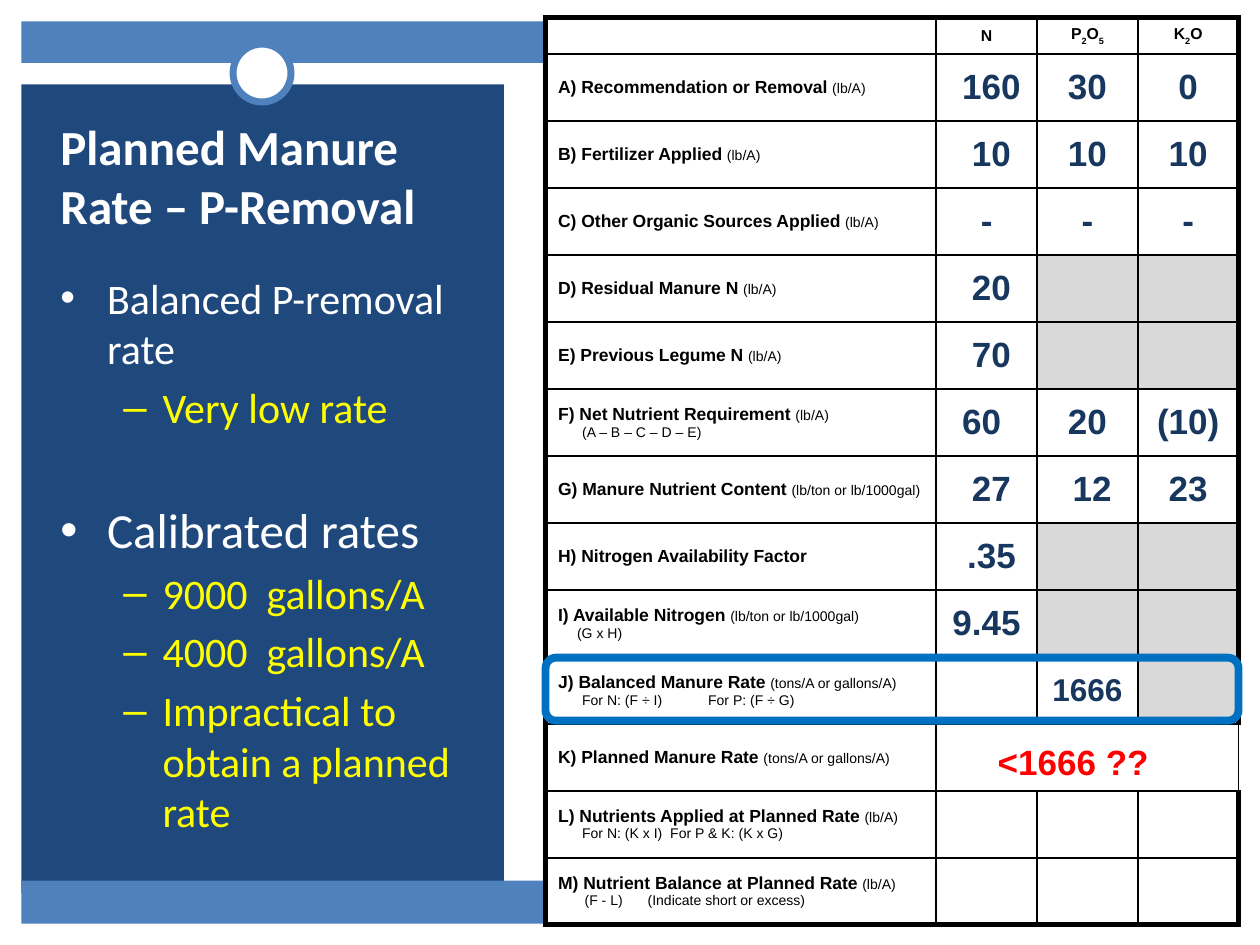
from lxml.etree import SubElement
from pptx import Presentation
from pptx.dml.color import RGBColor
from pptx.enum.shapes import MSO_SHAPE
from pptx.enum.text import MSO_ANCHOR, MSO_AUTO_SIZE, PP_ALIGN
from pptx.oxml.ns import qn
from pptx.util import Inches, Pt

BLACK = RGBColor(0x00, 0x00, 0x00)
WHITE = RGBColor(0xFF, 0xFF, 0xFF)
GREY = RGBColor(0xD9, 0xD9, 0xD9)
BLUE = RGBColor(0x4F, 0x81, 0xBD)
NAVY = RGBColor(0x1F, 0x49, 0x7D)
INK = RGBColor(0x17, 0x37, 0x5E)
YELLOW = RGBColor(0xFF, 0xFF, 0x00)
RED = RGBColor(0xFF, 0x00, 0x00)
HIGHLIGHT = RGBColor(0x00, 0x70, 0xC0)

TITLE = "Planned Manure Rate – P-Removal"
BULLETS = [
    (0, "Balanced P-removal rate", 24, 4.8),
    (1, "Very low rate", 24, 4.8),
    (0, "Calibrated rates", 28, 39),
    (1, "9000  gallons/A", 24, 4.8),
    (1, "4000  gallons/A", 24, 4.8),
    (1, "Impractical to obtain a planned rate", 24, 4.8),
]
LEVELS = [(WHITE, 0.37, -0.37), (YELLOW, 0.81, -0.31)]

HEADERS = ["", "N", "P2O5", "K2O"]
X = None
ROWS = [
    ("A) Recommendation or Removal ", "(lb/A)", "", [" 160", "30", "0"]),
    ("B) Fertilizer Applied ", "(lb/A)", "", [" 10", "10", "10"]),
    ("C) Other Organic Sources Applied ", "(lb/A)", "", ["-", "-", "-"]),
    ("D) Residual Manure N ", "(lb/A)", "", [" 20", X, X]),
    ("E) Previous Legume N ", "(lb/A)", "", [" 70", X, X]),
    ("F) Net Nutrient Requirement ", "(lb/A)", "(A – B – C – D – E)", ["60 ", "20", "(10)"]),
    ("G) Manure Nutrient Content ", "(lb/ton or lb/1000gal)", "", [" 27", " 12", "23"]),
    ("H) Nitrogen Availability Factor", "", "", [" .35", X, X]),
    ("I) Available Nitrogen ", "(lb/ton or lb/1000gal)", "(G x H)", ["9.45 ", X, X]),
    ("J) Balanced Manure Rate ", "(tons/A or gallons/A)",
     "For N: (F ÷ I)\tFor P: (F ÷ G)", ["", "1666 ", X]),
    ("K) Planned Manure Rate ", "(tons/A or gallons/A)", "", ["", "", ""]),
    ("L) Nutrients Applied at Planned Rate ", "(lb/A)",
     "For N: (K x I)  For P & K: (K x G)", ["", "", ""]),
    ("M) Nutrient Balance at Planned Rate ", "(lb/A)",
     "(F - L)\t(Indicate short or excess)", ["", "", ""]),
]
NOTE_INDENT = {"I": 0.15, "M": 0.21}
NOTE_TAB = {"J": 0.94, "M": 0.64}
MERGED_ROW = 11
COLUMNS = [3.1, 0.8, 0.8, 0.8]
HEADER_H, TABLE_H = 0.29, 7.2


def add_block(s, kind, box, fill=None, line=None, width=0):
    sp = s.shapes.add_shape(kind, *map(Inches, box))
    sp.shadow.inherit = False
    if fill is None:
        sp.fill.background()
    else:
        sp.fill.solid()
        sp.fill.fore_color.rgb = fill
    if line is None:
        sp.line.fill.background()
    else:
        sp.line.color.rgb = line
        sp.line.width = Pt(width)
    return sp


def add_run(p, text, size, color, bold=False, name="Arial"):
    r = p.add_run()
    r.text = text
    r.font.size, r.font.bold, r.font.name = Pt(size), bold, name
    r.font.color.rgb = color
    return r


def set_indent(p, left, first=0, tab=None):
    pPr = p._p.get_or_add_pPr()
    pPr.set("marL", str(Inches(left)))
    pPr.set("indent", str(Inches(first)))
    if tab:
        tabs = SubElement(pPr, qn("a:tabLst"))
        SubElement(tabs, qn("a:tab"), pos=str(Inches(tab)), algn="l")


def set_borders(cell, row, col, last_row, last_col):
    tcPr = cell._tc.get_or_add_tcPr()
    outer = {"lnL": col == 0, "lnR": col == last_col, "lnT": row == 0, "lnB": row == last_row}
    for i, (side, thick) in enumerate(outer.items()):
        ln = SubElement(tcPr, qn("a:" + side), w=str(Pt(3 if thick else 1)))
        fill = SubElement(ln, qn("a:solidFill"))
        SubElement(fill, qn("a:srgbClr"), val=str(BLACK))
        tcPr.insert(i, ln)


def fill_label(tf, label, unit, note):
    p = tf.paragraphs[0]
    add_run(p, label, 10, BLACK, True)
    if unit:
        add_run(p, unit, 8, BLACK)
    if note:
        p = tf.add_paragraph()
        set_indent(p, NOTE_INDENT.get(label[0], 0.19), tab=NOTE_TAB.get(label[0]))
        add_run(p, note, 8, BLACK)


def fill_header(p, formula):
    for char in formula:
        r = add_run(p, char, 9, BLACK, True)
        if char.isdigit():
            r.font._element.set("baseline", "-30000")


def add_worksheet(s):
    n_rows, n_cols = len(ROWS) + 1, len(COLUMNS)
    table = s.shapes.add_table(n_rows, n_cols, Inches(4.33), Inches(0.14),
                               Inches(sum(COLUMNS)), Inches(TABLE_H)).table
    table.first_row = table.horz_banding = False
    for column, width in zip(table.columns, COLUMNS):
        column.width = Inches(width)
    for i, row in enumerate(table.rows):
        row.height = Inches((TABLE_H - HEADER_H) / len(ROWS) if i else HEADER_H)
        for j, cell in enumerate(row.cells):
            value = ROWS[i - 1][3][j - 1] if i and j else ""
            cell.vertical_anchor = MSO_ANCHOR.MIDDLE
            cell.fill.solid()
            cell.fill.fore_color.rgb = GREY if value is X else WHITE
            set_borders(cell, i, j, n_rows - 1, n_cols - 1)
            p = cell.text_frame.paragraphs[0]
            if i and not j:
                fill_label(cell.text_frame, *ROWS[i - 1][:3])
                continue
            p.alignment = PP_ALIGN.CENTER
            if i == 0 and j:
                fill_header(p, HEADERS[j])
            elif value:
                add_run(p, value, 18 if value == "1666 " else 20, INK, True)
            else:
                p._p.get_or_add_endParaRPr().set("sz", "900")
    table.cell(MERGED_ROW, 1).merge(table.cell(MERGED_ROW, n_cols - 1))


def place(s, sp, box):
    s.shapes._spTree.append(sp._element)
    sp.left, sp.top, sp.width, sp.height = map(Inches, box)
    tf = sp.text_frame
    tf.word_wrap = True
    tf.auto_size = MSO_AUTO_SIZE.NONE
    return tf


def main():
    prs = Presentation()
    prs.slide_width, prs.slide_height = Inches(10), Inches(7.5)
    s = prs.slides.add_slide(prs.slide_layouts[1])

    add_block(s, MSO_SHAPE.RECTANGLE, (0.17, 0.17, 9.66, 0.33), BLUE)
    add_block(s, MSO_SHAPE.RECTANGLE, (0.17, 0.67, 3.83, 6.42), NAVY)
    add_block(s, MSO_SHAPE.OVAL, (1.85, 0.35, 0.46, 0.46), WHITE, BLUE, 4)
    add_block(s, MSO_SHAPE.RECTANGLE, (0.17, 6.99, 9.66, 0.34), BLUE)

    tf = place(s, s.shapes.title, (0.38, 0.85, 3.32, 1.08))
    tf.vertical_anchor = MSO_ANCHOR.MIDDLE
    tf.paragraphs[0].alignment = PP_ALIGN.LEFT
    add_run(tf.paragraphs[0], TITLE, 28, WHITE, True, "Calibri")

    tf = place(s, s.placeholders[1], (0.38, 2.11, 3.4, 4.87))
    for i, (level, text, size, gap) in enumerate(BULLETS):
        p = tf.add_paragraph() if i else tf.paragraphs[0]
        color, left, first = LEVELS[level]
        p.level = level
        p.space_before = Pt(gap)
        set_indent(p, left, first)
        add_run(p, text, size, color, name="Calibri")

    add_worksheet(s)
    add_block(s, MSO_SHAPE.ROUNDED_RECTANGLE, (4.33, 5.22, 5.5, 0.5), line=HIGHLIGHT, width=4.5)
    tf = s.shapes.add_textbox(*map(Inches, (7.82, 5.83, 1.57, 0.44))).text_frame
    tf.word_wrap = True
    add_run(tf.paragraphs[0], "<1666 ??", 20, RED, True)

    prs.save("out.pptx")


if __name__ == "__main__":
    main()
